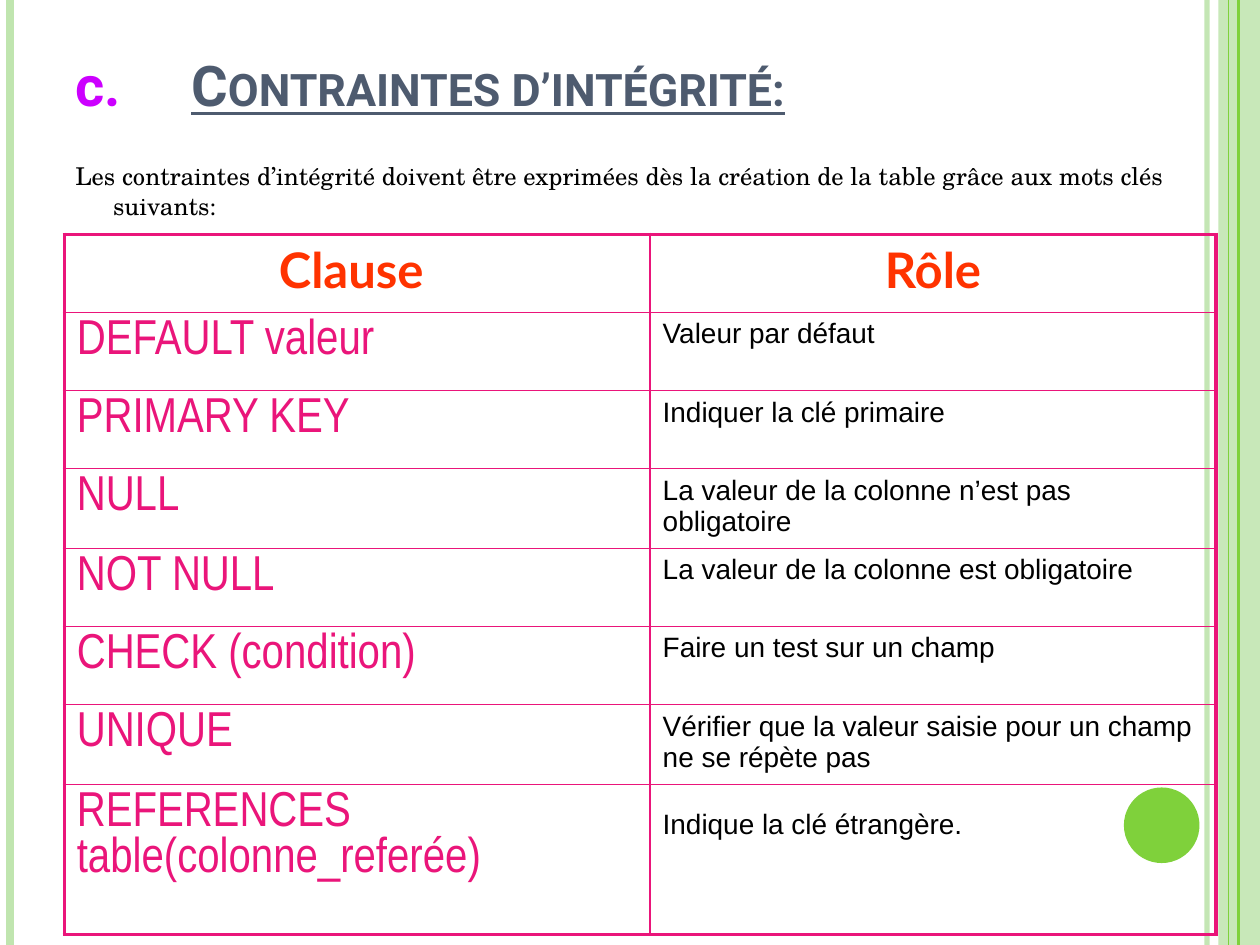
from lxml.etree import SubElement as Sub
from pptx import Presentation
from pptx.dml.color import RGBColor
from pptx.enum.shapes import MSO_CONNECTOR as CONN, MSO_SHAPE as SHAPE
from pptx.enum.text import PP_ALIGN as ALIGN
from pptx.oxml.ns import qn
from pptx.util import Inches, Pt

# Content
TITLE = "Contraintes d’intégrité:"
INTRO = ("Les contraintes d’intégrité doivent être exprimées dès la création "
         "de la table grâce aux mots clés suivants:")
HEADER = ("Clause ", "Rôle")
ROWS = [
    ("DEFAULT valeur", "Valeur par défaut"),
    ("PRIMARY KEY", "Indiquer la clé primaire"),
    ("NULL", "La valeur de la colonne n’est pas obligatoire"),
    ("NOT NULL", "La valeur de la colonne est obligatoire"),
    ("CHECK (condition)", "Faire un test sur un champ"),
    ("UNIQUE", "Vérifier que la valeur saisie pour un champ ne se répète pas"),
    ("REFERENCES table(colonne_referée)", "Indique la clé étrangère."),
]

# Formats
GREEN, PALE, PINK = "7FD13B", "C0E5AF", "EA157A"
TITLE_FMT = dict(name="Roboto", size=Pt(32), bold=True, underline=True, color="4E5B6F")
INTRO_FMT = dict(name="TeX Gyre Schola", size=Pt(14), color="000000")
HEAD_FMT = dict(name="Lato", size=Pt(28), bold=True, color="FF3300")
CLAUSE_FMT = dict(name="Arial Narrow", size=Pt(28), bold=False, color=PINK)
ROLE_FMT = dict(name="Arial", size=Pt(16), bold=False, color="000000")

# Side lines: x, colour, width, opacity in percent
SIDE_LINES = [(9.58, PALE, 3, 93), (0.08, PALE, 4.5, 100),
              (9.83, GREEN, 1.5, 100), (9.75, GREEN, 0.75, 100)]
COL_WIDTHS = (4.65, 4.49)
ROW_H, LAST_ROW_H = 0.62, 1.19
THIN, THICK = 1, 2.25


def rgb(value):
    return RGBColor.from_string(value)


def set_opacity(el, percent):
    for clr in el.iter(qn("a:srgbClr")):
        Sub(clr, qn("a:alpha"), val=str(percent * 1000))


def add_run(p, text, fmt):
    r = p.add_run()
    r.text = text
    for key, value in fmt.items():
        if key == "color":
            r.font.color.rgb = rgb(value)
        else:
            setattr(r.font, key, value)
    return r


def add_text(s, box, text, fmt, hang):
    tf = s.shapes.add_textbox(*map(Inches, box)).text_frame
    tf.word_wrap = True
    p = tf.paragraphs[0]
    pPr = p._p.get_or_add_pPr()
    pPr.set("marL", str(Inches(hang)))
    pPr.set("indent", str(-Inches(hang)))
    return tf, pPr, add_run(p, text, fmt)


def add_solid(s, kind, box, color):
    sp = s.shapes.add_shape(kind, *map(Inches, box))
    sp.shadow.inherit = False
    sp.fill.solid()
    sp.fill.fore_color.rgb = rgb(color)
    sp.line.fill.background()
    return sp


def set_borders(cell, widths):
    tcPr = cell._tc.get_or_add_tcPr()
    for i, (side, width) in enumerate(widths.items()):
        ln = tcPr.makeelement(qn("a:ln" + side), w=str(Pt(width)))
        Sub(Sub(ln, qn("a:solidFill")), qn("a:srgbClr"), val=PINK)
        tcPr.insert(i, ln)


prs = Presentation()
prs.slide_width, prs.slide_height = Inches(10), Inches(7.5)
s = prs.slides.add_slide(prs.slide_layouts[6])

# Side decoration
band = add_solid(s, SHAPE.RECTANGLE, (9.67, 0, 0.33, 7.5), PALE)
set_opacity(band._element.spPr, 87)
for x, color, width, opacity in SIDE_LINES:
    line = s.shapes.add_connector(CONN.STRAIGHT, Inches(x), 0, Inches(x), prs.slide_height)
    line.line.color.rgb = rgb(color)
    line.line.width = Pt(width)
    spPr = line._element.spPr
    if opacity < 100:
        set_opacity(spPr, opacity)
    Sub(spPr, qn("a:effectLst"))
add_solid(s, SHAPE.OVAL, (8.92, 6.25, 0.6, 0.6), GREEN)

# Title, numbered "c.", and introduction
tf, pPr, r = add_text(s, (0.5, 0.3, 9, 1.25), TITLE, TITLE_FMT, 0.92)
tf.margin_top = Inches(0.1)
r.font._element.set("cap", "small")
Sub(Sub(pPr, qn("a:buClr")), qn("a:srgbClr"), val="CC00FF")
Sub(pPr, qn("a:buAutoNum"), type="alphaLcPeriod", startAt="3")
add_text(s, (0.5, 1.23, 9.3, 0.71), INTRO, INTRO_FMT, 0.3)

# Table of clauses
rows = [HEADER] + ROWS
last = len(rows) - 1
heights = [ROW_H] * last + [LAST_ROW_H]
table = s.shapes.add_table(len(rows), 2, Inches(0.51), Inches(1.86),
                           Inches(sum(COL_WIDTHS)), Inches(sum(heights))).table
table.first_row = table.horz_banding = False
for col, width in zip(table.columns, COL_WIDTHS):
    col.width = Inches(width)
for i, texts in enumerate(rows):
    table.rows[i].height = Inches(heights[i])
    for j, text in enumerate(texts):
        cell = table.cell(i, j)
        cell.fill.background()
        p = cell.text_frame.paragraphs[0]
        if i == 0:
            p.alignment = ALIGN.CENTER
        add_run(p, text, HEAD_FMT if i == 0 else (CLAUSE_FMT, ROLE_FMT)[j])
        if (i, j) == (last, 1):  # a large space lowers the last baseline
            add_run(p, " ", {**ROLE_FMT, "size": Pt(28)})
        set_borders(cell, {"L": THICK if j == 0 else THIN,
                           "R": THICK if j == 1 else THIN,
                           "T": THICK if i == 0 else THIN,
                           "B": THICK if i == last else THIN})

prs.save("out.pptx")
